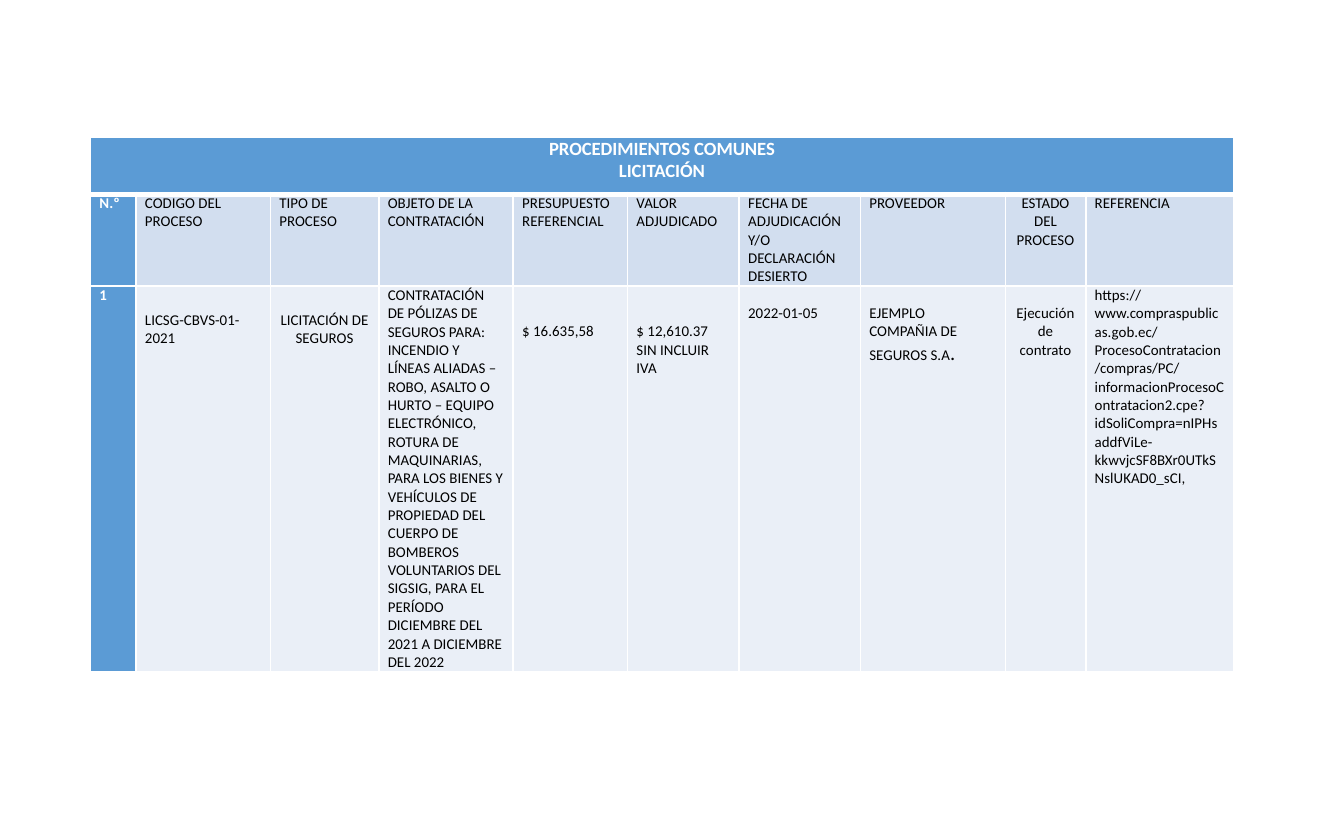
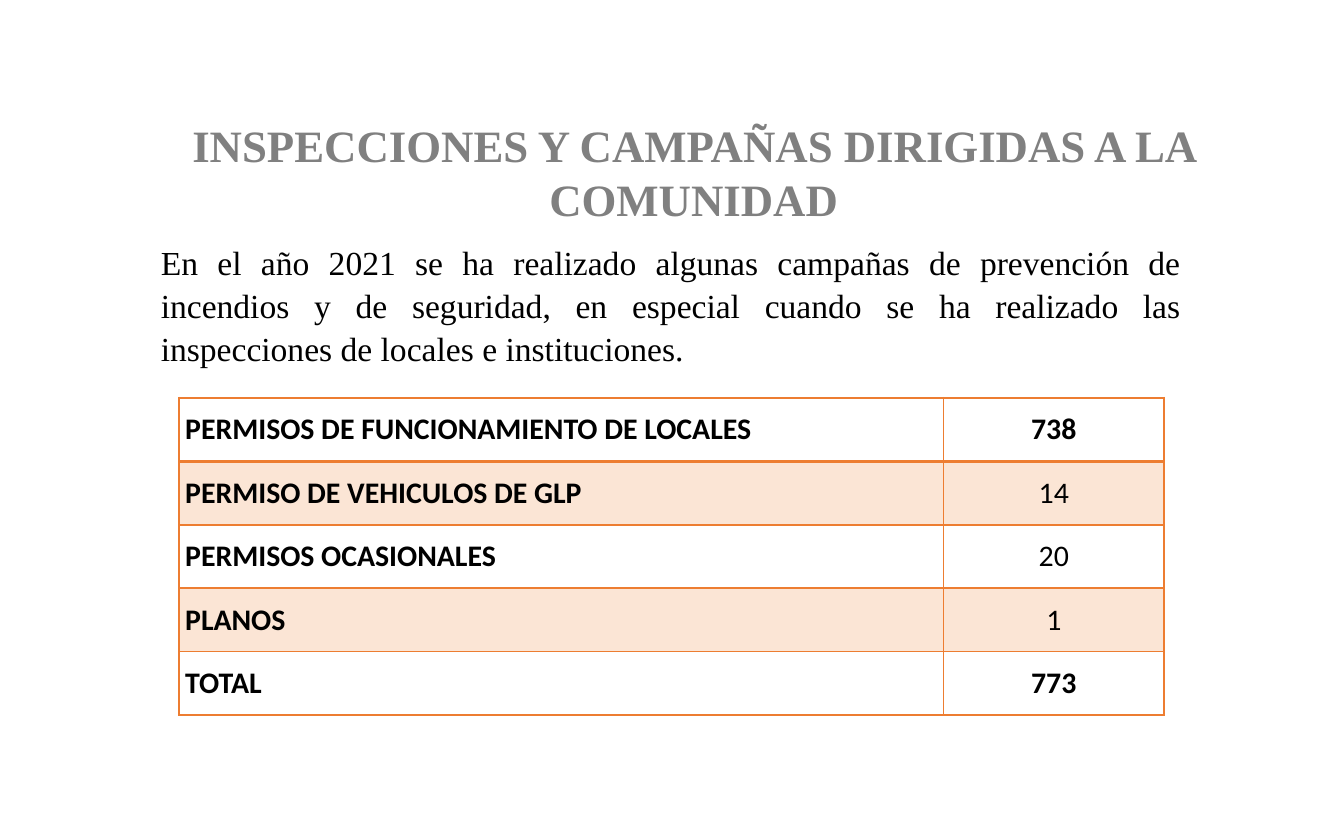
from dataclasses import dataclass
from typing import Optional

import pptx
import pptx.dml.color
import pptx.enum.text
import pptx.oxml
import pptx.oxml.ns
import pptx.util
from lxml import etree
from pptx.util import Cm

ALIGN = pptx.enum.text.PP_ALIGN
ANCHOR = pptx.enum.text.MSO_ANCHOR


@dataclass(frozen=True)
class Theme:
    white: str = "FFFFFF"
    black: str = "000000"
    gray: str = "808080"
    blue: str = "5B9BD5"
    blue_mid: str = "D2DEEF"
    blue_light: str = "EAEFF7"
    orange: str = "ED7D31"
    sans: str = "Calibri"
    serif: str = "Times New Roman"
    title: int = 24
    body: int = 18
    count: int = 16
    band: int = 10
    mark: int = 11
    small: int = 8


T = Theme()


@dataclass(frozen=True)
class Box:
    left: float
    top: float
    width: float
    height: float

    def lengths(self) -> tuple:
        return Cm(self.left), Cm(self.top), Cm(self.width), Cm(self.height)


@dataclass(frozen=True)
class CellSpec:
    text: str
    size: int = T.small
    color: str = T.black
    bold: bool = False
    align: ALIGN = ALIGN.LEFT
    fill: Optional[str] = None
    alpha: int = 100
    top: float = 0
    tail: str = ""


@dataclass(frozen=True)
class TableStyle:
    line: str
    rule: float  # width of the line under the first row, in points
    inset: float
    anchor: ANCHOR = ANCHOR.TOP


# Text
def add_text(p, text: str, *, size: int, font: str = T.sans, color: str = T.black,
             bold: bool = False, align: ALIGN = ALIGN.LEFT,
             spacing: Optional[float] = None) -> None:
    p.alignment = align
    if spacing:
        p.line_spacing = spacing
    r = p.add_run()
    r.text = text
    r.font.size = pptx.util.Pt(size)
    r.font.name = font
    r.font.bold = bold
    r.font.color.rgb = pptx.dml.color.RGBColor.from_string(color)


def add_box(s, box: Box, text: str, **fmt) -> None:
    tf = s.shapes.add_textbox(*box.lengths()).text_frame
    tf.word_wrap = True
    add_text(tf.paragraphs[0], text, font=T.serif, **fmt)


# Tables
def set_border(cell, side: str, color: str, width: float) -> None:
    tag = pptx.oxml.ns.qn
    ln = etree.SubElement(cell._tc.get_or_add_tcPr(), tag(f"a:ln{side}"),
                          w=str(pptx.util.Pt(width)))
    fill = etree.SubElement(ln, tag("a:solidFill"))
    etree.SubElement(fill, tag("a:srgbClr"), val=color)


def set_fill(cell, color: Optional[str], alpha: int) -> None:
    if color is None:
        cell.fill.background()
        return
    cell.fill.solid()
    cell.fill.fore_color.rgb = pptx.dml.color.RGBColor.from_string(color)
    if alpha < 100:
        tag = pptx.oxml.ns.qn
        clr = cell._tc.tcPr.find(f"{tag('a:solidFill')}/{tag('a:srgbClr')}")
        etree.SubElement(clr, tag("a:alpha"), val=str(alpha * 1000))


def fill_cell(cell, spec: CellSpec, style: TableStyle) -> None:
    cell.margin_left = cell.margin_right = Cm(style.inset)
    cell.margin_top, cell.margin_bottom = Cm(spec.top), 0
    cell.vertical_anchor = style.anchor
    set_fill(cell, spec.fill, spec.alpha)
    tf = cell.text_frame
    fmt = dict(color=spec.color, bold=spec.bold, align=spec.align)
    for i, line in enumerate(spec.text.split("\n")):
        p = tf.add_paragraph() if i else tf.paragraphs[0]
        add_text(p, line, size=spec.size, **fmt)
    if spec.tail:
        add_text(p, spec.tail, size=T.mark, **fmt)


def add_grid(s, left: float, top: float, cols: list[float], heights: list[float],
             rows: list[list[CellSpec]], style: TableStyle) -> None:
    box = Box(left, top, sum(cols), sum(heights))
    table = s.shapes.add_table(len(heights), len(cols), *box.lengths()).table
    table.first_row = table.horz_banding = False
    for column, width in zip(table.columns, cols):
        column.width = Cm(width)
    for i, (row, height) in enumerate(zip(table.rows, heights)):
        row.height = Cm(height)
        for cell in row.cells:
            widths = {"L": 1, "R": 1, "T": style.rule if i == 1 else 1,
                      "B": style.rule if i == 0 else 1}
            for side, width in widths.items():
                set_border(cell, side, style.line, width)
        if len(rows[i]) == 1:
            table.cell(i, 0).merge(table.cell(i, len(cols) - 1))
        for j, spec in enumerate(rows[i]):
            fill_cell(table.cell(i, j), spec, style)


# Slide 1: tender process
def tender_slide(s) -> None:
    line, mark_line = 0.345, 0.47  # line heights of the small and mark sizes
    band = CellSpec("PROCEDIMIENTOS COMUNES\nLICITACIÓN", T.band, T.white, True,
                    ALIGN.CENTER, T.blue)
    headings = ["CODIGO DEL PROCESO", "TIPO DE PROCESO", "OBJETO DE LA CONTRATACIÓN",
                "PRESUPUESTO REFERENCIAL", "VALOR ADJUDICADO",
                "FECHA DE ADJUDICACIÓN Y/O DECLARACIÓN DESIERTO", "PROVEEDOR",
                "ESTADO DEL PROCESO", "REFERENCIA"]

    def key(text: str) -> CellSpec:
        return CellSpec(text, color=T.white, bold=True, fill=T.blue)

    def heading(text: str) -> CellSpec:
        align = ALIGN.CENTER if text.startswith("ESTADO") else ALIGN.LEFT
        return CellSpec(text, align=align, fill=T.blue_mid)

    def value(text: str, top: float = 0, align: ALIGN = ALIGN.LEFT,
              tail: str = "") -> CellSpec:
        return CellSpec(text, align=align, fill=T.blue_light, top=top, tail=tail)

    process = [
        key("1"),
        value("LICSG-CBVS-01-2021", mark_line),
        value("LICITACIÓN DE SEGUROS", mark_line, ALIGN.CENTER),
        value("CONTRATACIÓN DE PÓLIZAS DE SEGUROS PARA: INCENDIO Y LÍNEAS ALIADAS – "
              "ROBO, ASALTO O HURTO – EQUIPO ELECTRÓNICO, ROTURA DE MAQUINARIAS, PARA "
              "LOS BIENES Y VEHÍCULOS DE PROPIEDAD DEL CUERPO DE BOMBEROS VOLUNTARIOS "
              "DEL SIGSIG, PARA EL PERÍODO DICIEMBRE DEL 2021 A DICIEMBRE DEL 2022"),
        value("$ 16.635,58", 2 * line),
        value("$ 12,610.37 SIN INCLUIR IVA", 2 * line),
        value("2022-01-05", line),
        value("EJEMPLO COMPAÑIA DE SEGUROS S.A", line, tail="."),
        value("Ejecución de contrato", line, ALIGN.CENTER),
        value("https://www.compraspublicas.gob.ec/ProcesoContratacion/compras/PC/"
              "informacionProcesoContratacion2.cpe?idSoliCompra=nIPHsaddfViLe-"
              "kkwvjcSF8BXr0UTkSNslUKAD0_sCI,"),
    ]
    add_grid(s, 1.71, 2.6,
             [0.86, 2.54, 2.05, 2.54, 2.16, 2.11, 2.29, 2.74, 1.52, 2.79],
             [1.07, 1.72, 7.28],
             [[band], [key("N.º"), *map(heading, headings)], process],
             TableStyle(T.white, 3, 0.17))


# Slide 2: inspections and campaigns
def inspections_slide(s) -> None:
    add_box(s, Box(1.96, 2.11, 22.3, 2.31),
            "INSPECCIONES Y CAMPAÑAS DIRIGIDAS A LA COMUNIDAD",
            size=T.title, color=T.gray, bold=True, align=ALIGN.CENTER)
    add_box(s, Box(2.79, 4.39, 19.79, 2.67),
            "En el año 2021 se ha realizado algunas campañas de prevención de incendios "
            "y de seguridad, en especial cuando se ha realizado las inspecciones de "
            "locales e instituciones.",
            size=T.body, align=ALIGN.JUSTIFY, spacing=1.07)

    permits = [("PERMISOS DE FUNCIONAMIENTO DE LOCALES", 738),
               ("PERMISO DE VEHICULOS DE GLP", 14),
               ("PERMISOS OCASIONALES", 20),
               ("PLANOS", 1)]
    permits.append(("TOTAL", sum(count for _, count in permits)))
    last = len(permits) - 1
    rows = []
    for i, (name, count) in enumerate(permits):
        fmt = dict(size=T.count, fill=T.orange if i % 2 else None, alpha=20)
        rows.append([CellSpec(name, bold=True, **fmt),
                     CellSpec(str(count), bold=i in (0, last), align=ALIGN.CENTER, **fmt)])
    add_grid(s, 3.38, 7.52, [14.45, 4.17], [1.2] * len(rows), rows,
             TableStyle(T.orange, 2, 0.12, ANCHOR.MIDDLE))


def main() -> None:
    prs = pptx.Presentation()
    prs.slide_width, prs.slide_height = Cm(25.4), Cm(15.88)
    blank = prs.slide_layouts[6]
    for build in (tender_slide, inspections_slide):
        build(prs.slides.add_slide(blank))
    prs.save("out.pptx")


if __name__ == "__main__":
    main()
